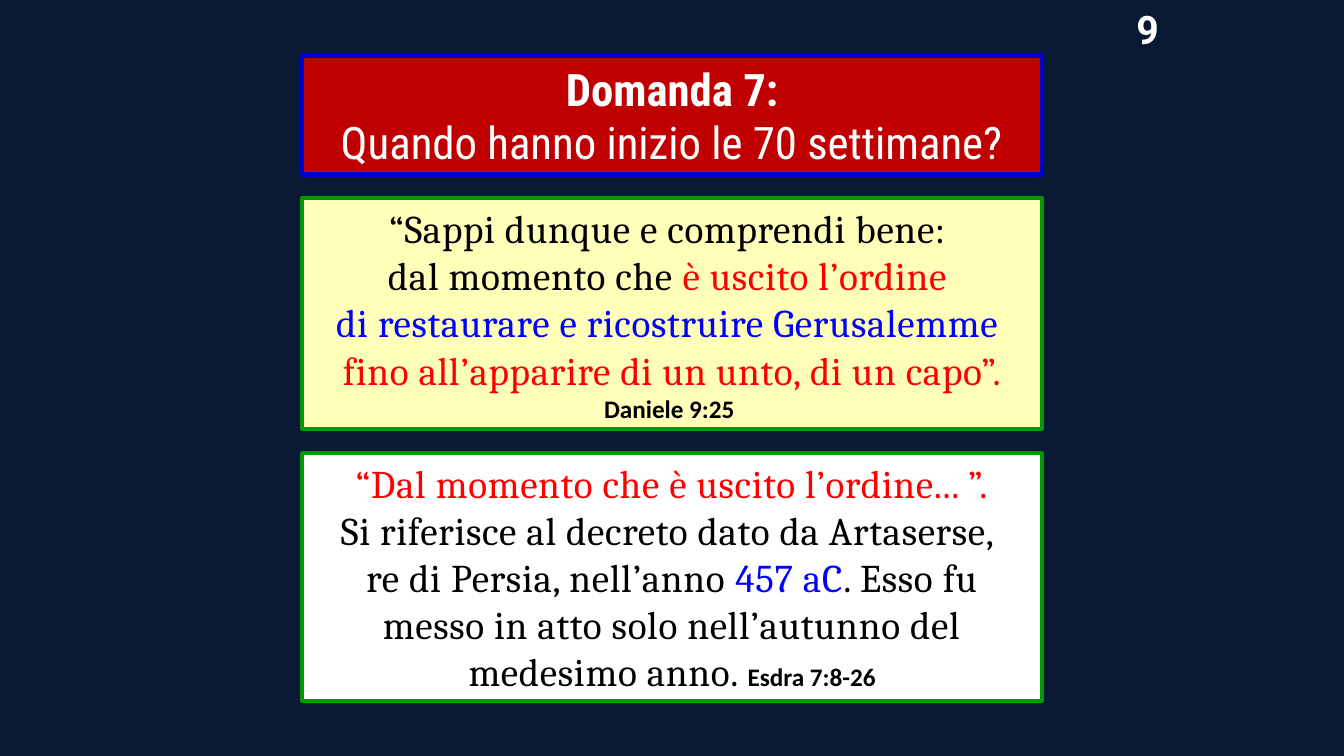
from lxml import etree
from pptx import Presentation
from pptx.dml.color import RGBColor
from pptx.enum.shapes import MSO_SHAPE
from pptx.enum.text import MSO_ANCHOR, MSO_AUTO_SIZE, PP_ALIGN
from pptx.oxml.ns import qn
from pptx.util import Cm, Pt

NAVY = RGBColor(0x09, 0x19, 0x33)
WHITE = RGBColor(0xFF, 0xFF, 0xFF)
BLACK = RGBColor(0x00, 0x00, 0x00)
CRIMSON = RGBColor(0xC0, 0x00, 0x00)
CREAM = RGBColor(0xFF, 0xFF, 0xB9)
GREEN = RGBColor(0x00, 0x99, 0x00)
DARK_BLUE = RGBColor(0x00, 0x00, 0xCC)
BLUE = RGBColor(0x00, 0x00, 0xFF)
RED = RGBColor(0xFF, 0x00, 0x00)
ORANGE_RED = RGBColor(0xFF, 0x33, 0x00)

# Text styles
TITLE = dict(font="Roboto Condensed", size=32, color=WHITE)
TITLE_BOLD = dict(TITLE, bold=True)
QUOTE = dict(font="Cambria", size=28, color=BLACK, outline=BLACK, spacing=0.5)
QUOTE_RED = dict(QUOTE, color=RED, outline=RED)
QUOTE_BLUE = dict(QUOTE, color=BLUE, outline=BLUE)
QUOTE_END = dict(QUOTE, color=RED, outline=ORANGE_RED)
REFERENCE = dict(font="Calibri", size=18, color=BLACK, bold=True)
NUMBER = dict(font="Roboto", size=28, color=WHITE, bold=True)

# Content: paragraphs of (text, style) spans
question = [
    [("Domanda 7:", TITLE_BOLD)],
    [("Quando hanno inizio le 70 settimane?", TITLE)],
]
verse = [
    [("“Sappi dunque e comprendi bene: ", QUOTE)],
    [("dal momento che ", QUOTE), ("è uscito l’ordine ", QUOTE_RED)],
    [("di restaurare e ricostruire Gerusalemme ", QUOTE_BLUE)],
    [("fino all’apparire di un unto, di un capo”. ", QUOTE_END),
     ("Daniele 9:25 ", REFERENCE)],
]
answer = [
    [("“Dal momento che è uscito l’ordine... ”.", QUOTE_RED)],
    [("Si riferisce al decreto dato da Artaserse, ", QUOTE)],
    [("re di Persia, nell’anno ", QUOTE), ("457 aC", QUOTE_BLUE),
     (". Esso fu messo in atto solo nell’autunno del medesimo anno. ", QUOTE),
     ("Esdra 7:8-26", REFERENCE)],
]
# Panels from top to bottom: paragraphs, height in cm, fill, border
panels = [
    (question, 3.0, CRIMSON, DARK_BLUE),
    (verse, 5.82, CREAM, GREEN),
    (answer, 6.25, WHITE, GREEN),
]
PANEL_LEFT, PANEL_TOP, PANEL_WIDTH, PANEL_GAP = 7.62, 1.4, 18.64, 0.6


def add_span(para, text, *, font, size, color, bold=False, outline=None, spacing=0):
    span = para.add_run()
    span.text = text
    span.font.name = font
    span.font.size = Pt(size)
    span.font.bold = bold
    span.font.color.rgb = color
    props = span.font._element
    if spacing:
        props.set("spc", str(round(spacing * 100)))
    if outline is not None:
        line = etree.Element(qn("a:ln"), w=str(Pt(1.5)))
        fill = etree.SubElement(line, qn("a:solidFill"))
        etree.SubElement(fill, qn("a:srgbClr"), val=str(outline))
        props.insert(0, line)


def fill_text(box, paragraphs, wrap=True):
    frame = box.text_frame
    frame.word_wrap = wrap
    frame.auto_size = MSO_AUTO_SIZE.SHAPE_TO_FIT_TEXT
    for index, spans in enumerate(paragraphs):
        para = frame.add_paragraph() if index else frame.paragraphs[0]
        para.alignment = PP_ALIGN.CENTER
        for text, style in spans:
            add_span(para, text, **style)


def main():
    deck = Presentation()
    deck.slide_width, deck.slide_height = Cm(33.87), Cm(19.05)
    page = deck.slides.add_slide(deck.slide_layouts[6])
    page.background.fill.solid()
    page.background.fill.fore_color.rgb = NAVY

    # Stacked panels
    top = PANEL_TOP
    for paragraphs, height, fill, border in panels:
        box = page.shapes.add_shape(MSO_SHAPE.RECTANGLE, Cm(PANEL_LEFT), Cm(top),
                                    Cm(PANEL_WIDTH), Cm(height))
        box.shadow.inherit = False
        box.fill.solid()
        box.fill.fore_color.rgb = fill
        box.line.color.rgb = border
        box.line.width = Pt(3)
        box.text_frame.vertical_anchor = MSO_ANCHOR.MIDDLE
        fill_text(box, paragraphs)
        top += height + PANEL_GAP

    # Page number
    number = page.shapes.add_textbox(Cm(28.35), Cm(0), Cm(1.14), Cm(1.45))
    fill_text(number, [[("9", NUMBER)]], wrap=False)

    deck.save("out.pptx")


if __name__ == "__main__":
    main()
